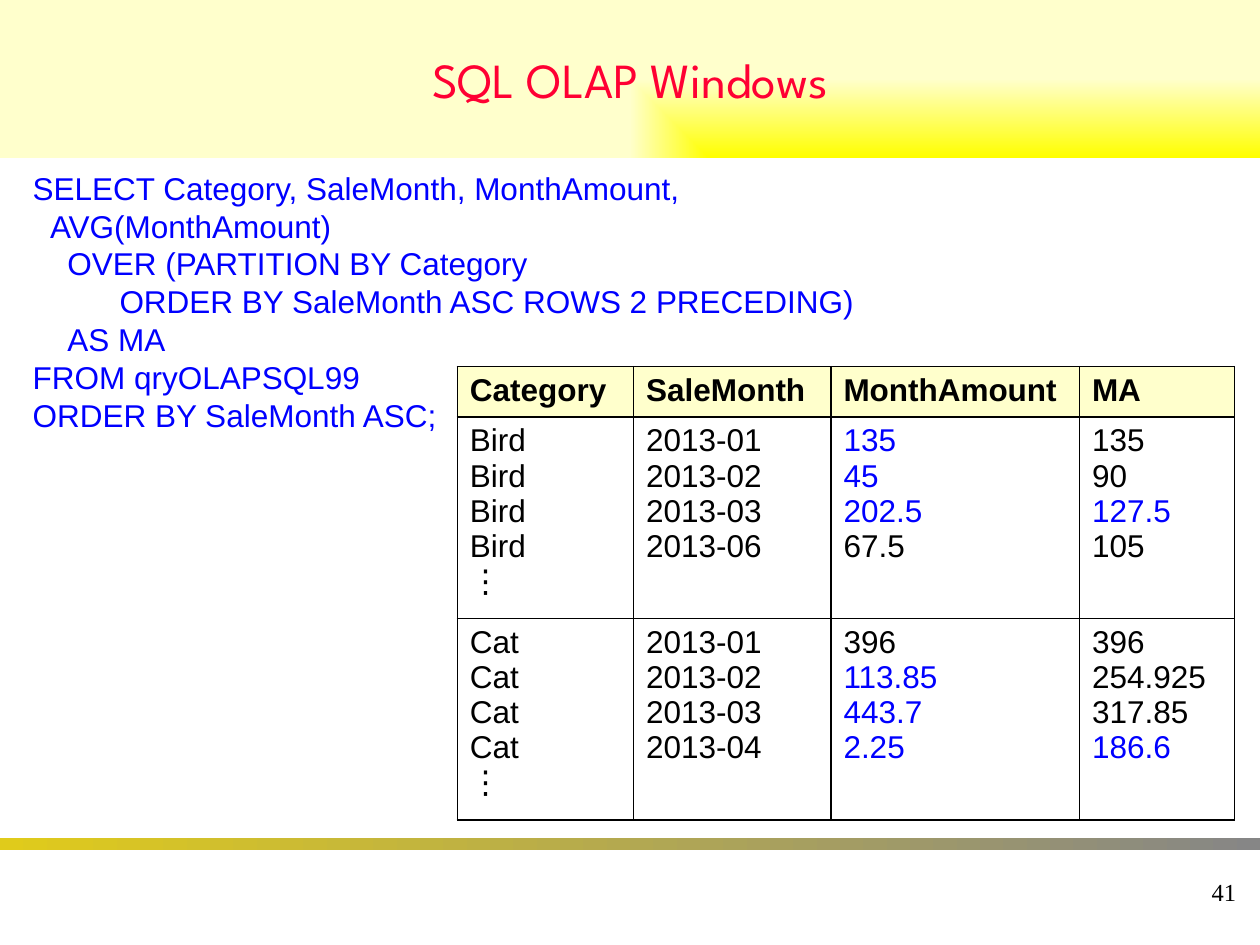
from lxml import etree
from pptx import Presentation
from pptx.dml.color import RGBColor
from pptx.enum.shapes import MSO_SHAPE
from pptx.enum.text import MSO_ANCHOR, PP_ALIGN
from pptx.oxml.ns import qn
from pptx.util import Cm, Pt

RECTANGLE = MSO_SHAPE.RECTANGLE
MIDDLE = MSO_ANCHOR.MIDDLE
LEFT, CENTER, RIGHT = PP_ALIGN.LEFT, PP_ALIGN.CENTER, PP_ALIGN.RIGHT

BLACK = RGBColor(0x00, 0x00, 0x00)
BLUE = RGBColor(0x00, 0x00, 0xFF)
RED = RGBColor(0xFF, 0x00, 0x33)
YELLOW = RGBColor(0xFF, 0xFF, 0x00)
CREAM = RGBColor(0xFF, 0xFF, 0xCC)
GOLD = RGBColor(0xE0, 0xCB, 0x1B)
GRAY = RGBColor(0x86, 0x86, 0x86)

INDENT_STEP = 0.35  # cm
QUERY = [  # indent steps, line
    (0, "SELECT Category, SaleMonth, MonthAmount,"),
    (1, "AVG(MonthAmount)"),
    (2, "OVER (PARTITION BY Category"),
    (5, "ORDER BY SaleMonth ASC ROWS 2 PRECEDING)"),
    (2, "AS MA"),
    (0, "FROM qryOLAPSQL99"),
    (0, "ORDER BY SaleMonth ASC;"),
]

COLUMN_WIDTHS = [3.55, 3.98, 5.01, 3.13]
ROW_HEIGHTS = [1.02, 4.06, 4.06]
HEADINGS = ["Category", "SaleMonth", "MonthAmount", "MA"]
GROUPS = [  # one table row per category
    [["Bird"] * 4 + ["⋮"],
     ["2013-01", "2013-02", "2013-03", "2013-06"],
     ["135", "45", "202.5", "67.5"],
     ["135", "90", "127.5", "105"]],
    [["Cat"] * 4 + ["⋮"],
     ["2013-01", "2013-02", "2013-03", "2013-04"],
     ["396", "113.85", "443.7", "2.25"],
     ["396", "254.925", "317.85", "186.6"]],
]
# (group, column) -> lines shown in blue: the averaged window and its result
HIGHLIGHTS = {(0, 2): {0, 1, 2}, (0, 3): {2}, (1, 2): {1, 2, 3}, (1, 3): {3}}


def write_line(paragraph, text, size, font, color, align=LEFT, bold=False):
    paragraph.text = text
    paragraph.alignment = align
    paragraph.font.size = Pt(size)
    paragraph.font.name = font
    paragraph.font.color.rgb = color
    paragraph.font.bold = bold


def next_paragraph(frame, index):
    return frame.add_paragraph() if index else frame.paragraphs[0]


def add_band(slide, box, start, end):
    """Borderless rectangle with a left-to-right gradient."""
    band = slide.shapes.add_shape(RECTANGLE, *map(Cm, box))
    band.shadow.inherit = False
    band.line.fill.background()
    band.fill.gradient()
    band.fill.gradient_angle = 0
    for stop, color in zip(band.fill.gradient_stops, (start, end)):
        stop.color.rgb = color
    return band


def add_title(slide, box, text):
    title = add_band(slide, box, YELLOW, CREAM)
    # Let the gradient spread from the lower right corner
    gradient = title._element.spPr.find(qn("a:gradFill"))
    gradient.remove(gradient.find(qn("a:lin")))
    spread = etree.SubElement(gradient, qn("a:path"), {"path": "rect"})
    etree.SubElement(spread, qn("a:fillToRect"), {"l": "100000", "t": "100000"})
    title.text_frame.vertical_anchor = MIDDLE
    write_line(title.text_frame.paragraphs[0], text, 28, "League Spartan", RED, CENTER)


def add_query(slide, box):
    frame = slide.shapes.add_textbox(*map(Cm, box)).text_frame
    frame.word_wrap = True
    for index, (steps, text) in enumerate(QUERY):
        line = next_paragraph(frame, index)
        write_line(line, text, 18, "Arial", BLUE)
        line.line_spacing = Pt(21.6)
        line._p.get_or_add_pPr().set("marL", str(Cm(steps * INDENT_STEP)))


def set_borders(cell):
    properties = cell._tc.get_or_add_tcPr()
    for side in ("lnL", "lnR", "lnT", "lnB"):
        border = etree.SubElement(properties, qn(f"a:{side}"), {"w": str(Pt(1))})
        fill = etree.SubElement(border, qn("a:solidFill"))
        etree.SubElement(fill, qn("a:srgbClr"), {"val": str(BLACK)})


def fill_cell(cell, lines, blue_lines=(), heading=False):
    set_borders(cell)
    if heading:
        cell.fill.solid()
        cell.fill.fore_color.rgb = CREAM
    else:
        cell.fill.background()
    for index, text in enumerate(lines):
        line = next_paragraph(cell.text_frame, index)
        color = BLUE if index in blue_lines else BLACK
        write_line(line, text, 18, "Arial", color, bold=heading)
        line.line_spacing = Pt(20.1)
        properties = line._p.get_or_add_pPr()
        properties.set("marL", str(Cm(0.95)))
        properties.set("indent", str(-Cm(0.95)))


def add_result_table(slide, left, top):
    table = slide.shapes.add_table(
        len(ROW_HEIGHTS), len(COLUMN_WIDTHS), Cm(left), Cm(top),
        Cm(sum(COLUMN_WIDTHS)), Cm(sum(ROW_HEIGHTS))).table
    table.first_row = False
    table.horz_banding = False
    for column, width in zip(table.columns, COLUMN_WIDTHS):
        column.width = Cm(width)
    for row, height in zip(table.rows, ROW_HEIGHTS):
        row.height = Cm(height)
    for col, heading in enumerate(HEADINGS):
        fill_cell(table.cell(0, col), [heading], heading=True)
    for group, columns in enumerate(GROUPS):
        for col, lines in enumerate(columns):
            fill_cell(table.cell(group + 1, col), lines, HIGHLIGHTS.get((group, col), ()))


def add_page_number(slide, box, number):
    frame = slide.shapes.add_textbox(*map(Cm, box)).text_frame
    frame.word_wrap = True
    frame.vertical_anchor = MIDDLE
    write_line(frame.paragraphs[0], number, 14, "Times New Roman", BLACK, RIGHT)


def main():
    deck = Presentation()
    deck.slide_width, deck.slide_height = Cm(25.4), Cm(19.05)
    slide = deck.slides.add_slide(deck.slide_layouts[6])

    # Footer
    add_band(slide, (0, 16.89, 25.4, 0.25), GOLD, GRAY)
    add_page_number(slide, (19.89, 17.35, 5.28, 1.27), "41")
    # Title and content
    add_title(slide, (0, 0, 25.4, 3.18), "SQL OLAP Windows")
    add_query(slide, (0.41, 3.28, 19.48, 5.59))
    add_result_table(slide, 9.22, 7.39)

    deck.save("out.pptx")


if __name__ == "__main__":
    main()
